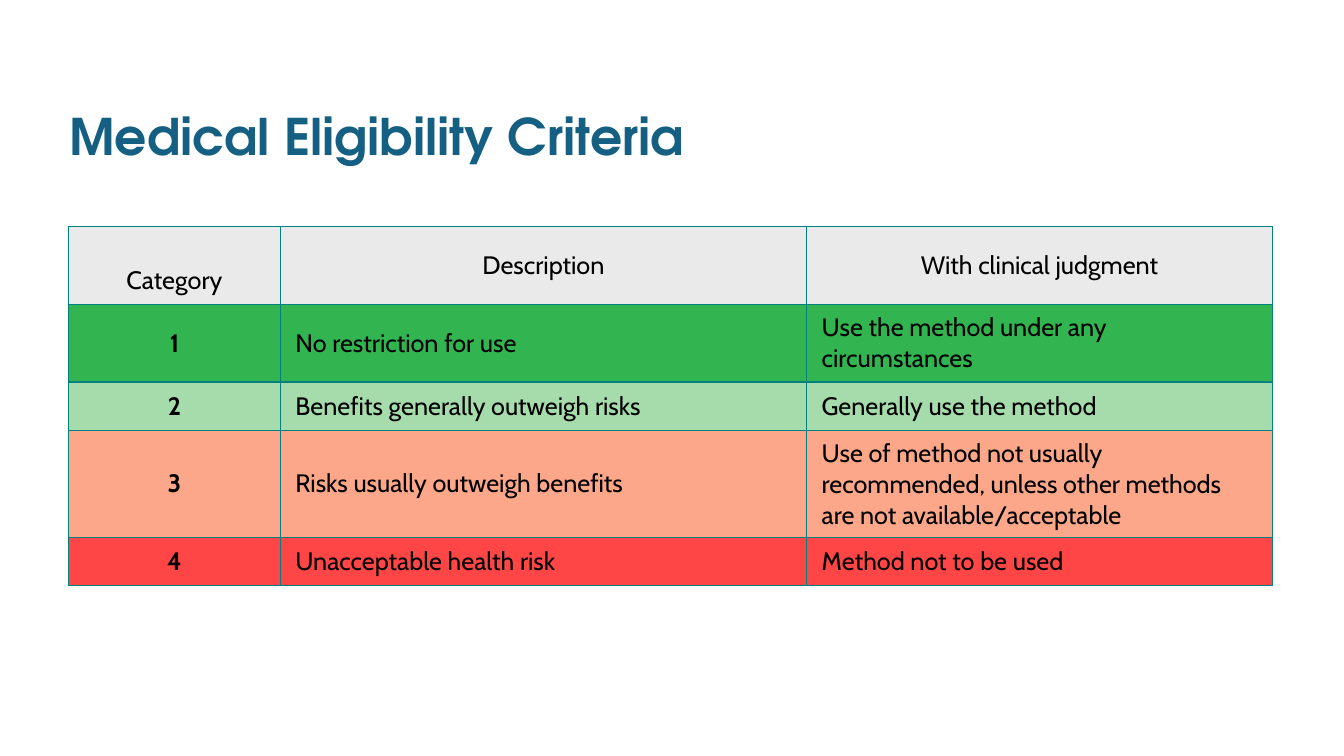
from dataclasses import dataclass

from lxml.etree import SubElement
from pptx import Presentation
from pptx.dml.color import RGBColor
from pptx.enum.text import MSO_ANCHOR, PP_ALIGN
from pptx.oxml.ns import qn
from pptx.util import Inches, Pt


@dataclass(frozen=True)
class Theme:
    title_font: str = "TeX Gyre Adventor"
    body_font: str = "Cabin"
    title_size: int = 36
    body_size: int = 18
    title_color: str = "156082"
    text_color: str = "000000"
    border_color: str = "008080"
    border_width: int = 1
    header_fill: str = "EAEAEA"
    category_fills: tuple = ("32B450", "A6DBAB", "FCA789", "FF4646")


HEADER = ("Category", "Description", "With clinical judgment")
CATEGORIES = (
    ("1", "No restriction for use", "Use the method under any circumstances"),
    ("2", "Benefits generally outweigh risks", "Generally use the method"),
    ("3", "Risks usually outweigh benefits",
     "Use of method not usually recommended, unless other methods are not available/acceptable"),
    ("4", "Unacceptable health risk", "Method not to be used"),
)
COLUMN_WIDTHS = (2.1, 5.22, 4.62)
ROW_HEIGHTS = (0.77, 0.77, 0.48, 1.06, 0.48)


class SlideBuilder:
    def __init__(self, page, theme):
        self.page = page
        self.theme = theme

    def add_span(self, para, text, font_name, size, color, bold=False):
        span = para.add_run()
        span.text = text
        span.font.name = font_name
        span.font.size = Pt(size)
        span.font.bold = bold
        span.font.color.rgb = RGBColor.from_string(color)

    def add_title(self, text, left, top, width, height):
        box = self.page.shapes.add_textbox(
            Inches(left), Inches(top), Inches(width), Inches(height))
        frame = box.text_frame
        frame.word_wrap = True
        frame.vertical_anchor = MSO_ANCHOR.BOTTOM
        para = frame.paragraphs[0]
        para.line_spacing = 0.9
        self.add_span(para, text, self.theme.title_font, self.theme.title_size,
                      self.theme.title_color, bold=True)

    def add_borders(self, cell):
        properties = cell._tc.get_or_add_tcPr()
        for side in ("a:lnL", "a:lnR", "a:lnT", "a:lnB"):
            line = SubElement(properties, qn(side), w=str(Pt(self.theme.border_width)))
            fill = SubElement(line, qn("a:solidFill"))
            SubElement(fill, qn("a:srgbClr"), val=self.theme.border_color)

    def fill_cell(self, cell, text, color, centered, bold):
        self.add_borders(cell)
        cell.fill.solid()
        cell.fill.fore_color.rgb = RGBColor.from_string(color)
        cell.margin_left = cell.margin_right = Inches(0.15)
        cell.margin_top = cell.margin_bottom = Inches(0.08)
        cell.vertical_anchor = MSO_ANCHOR.MIDDLE
        para = cell.text_frame.paragraphs[0]
        para.alignment = PP_ALIGN.CENTER if centered else PP_ALIGN.LEFT
        self.add_span(para, text, self.theme.body_font, self.theme.body_size,
                      self.theme.text_color, bold)

    def add_criteria_table(self, left, top):
        rows = (HEADER, *CATEGORIES)
        fills = (self.theme.header_fill, *self.theme.category_fills)
        table = self.page.shapes.add_table(
            len(rows), len(HEADER), Inches(left), Inches(top),
            Inches(sum(COLUMN_WIDTHS)), Inches(sum(ROW_HEIGHTS))).table
        table.first_row = False
        table.horz_banding = False
        for column, width in zip(table.columns, COLUMN_WIDTHS):
            column.width = Inches(width)
        for row, height in zip(table.rows, ROW_HEIGHTS):
            row.height = Inches(height)
        for row_index, (texts, color) in enumerate(zip(rows, fills)):
            is_header = row_index == 0
            for column_index, text in enumerate(texts):
                is_category = column_index == 0
                self.fill_cell(table.cell(row_index, column_index), text, color,
                               centered=is_header or is_category,
                               bold=is_category and not is_header)
        table.cell(0, 0).vertical_anchor = MSO_ANCHOR.BOTTOM


def main():
    deck = Presentation()
    deck.slide_width = Inches(13.33)
    deck.slide_height = Inches(7.5)
    page = deck.slides.add_slide(deck.slide_layouts[6])
    builder = SlideBuilder(page, Theme())
    builder.add_title("Medical Eligibility Criteria", 0.59, 0.14, 12.02, 1.56)
    builder.add_criteria_table(0.68, 2.25)
    deck.save("out.pptx")


if __name__ == "__main__":
    main()
